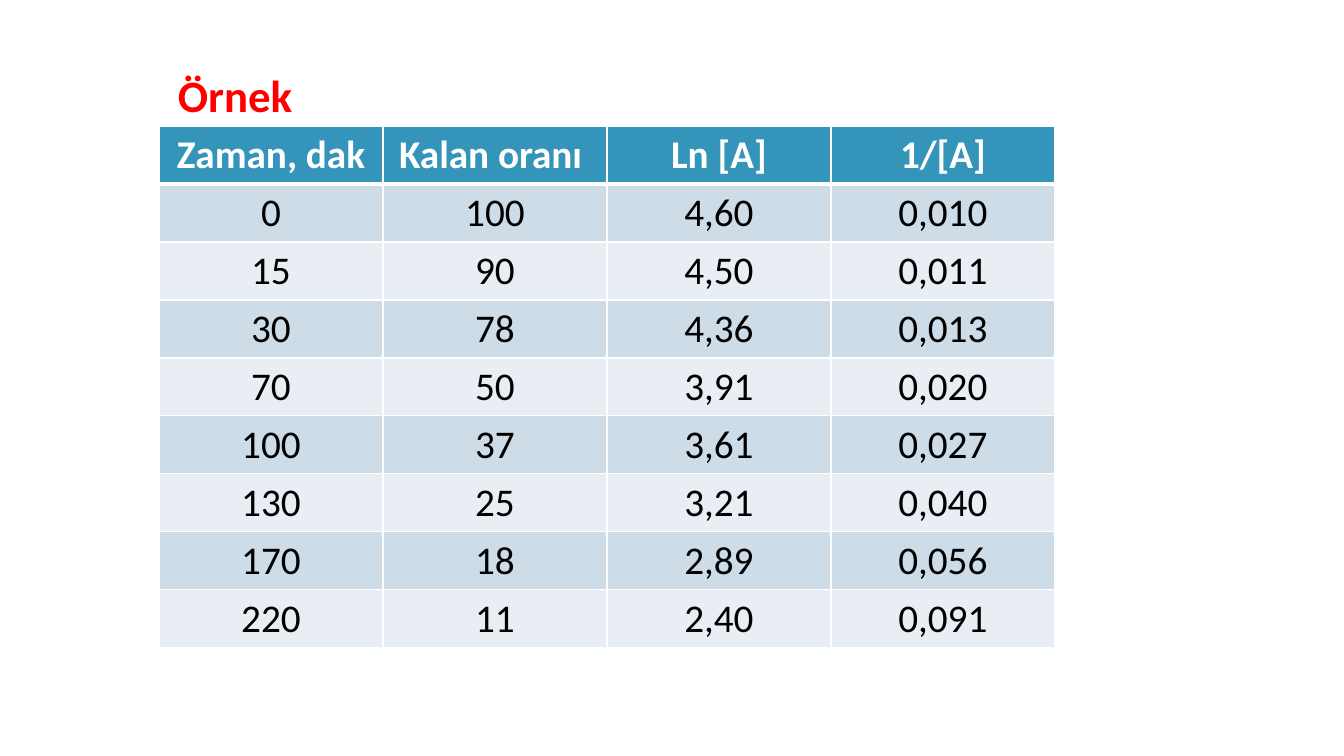
from typing import NamedTuple

from lxml.etree import SubElement
from pptx import Presentation
from pptx.dml.color import RGBColor
from pptx.enum.text import MSO_ANCHOR, PP_ALIGN
from pptx.oxml.ns import qn
from pptx.slide import Slide
from pptx.table import _Cell
from pptx.text.text import Font
from pptx.util import Emu, Pt

SLIDE_WIDTH, SLIDE_HEIGHT = 1344, 756
EMU_PER_PX = 12192000 / SLIDE_WIDTH

FONT_NAME = "Calibri"
RED = RGBColor(0xFF, 0x00, 0x00)
WHITE = RGBColor(0xFF, 0xFF, 0xFF)
BLACK = RGBColor(0x00, 0x00, 0x00)
TEAL = RGBColor(0x34, 0x94, 0xBA)
BAND_DARK = RGBColor(0xCE, 0xDC, 0xE7)
BAND_LIGHT = RGBColor(0xE8, 0xEE, 0xF3)

COLUMN_WIDTH, ROW_HEIGHT = 224, 58
THIN, THICK = Pt(1), Pt(3)


class Measurement(NamedTuple):
    time: str
    remaining: str
    log: str
    inverse: str


HEADINGS = Measurement("Zaman, dak", "Kalan oranı ", "Ln [A]", "1/[A]")
MEASUREMENTS = [
    Measurement("0", "100", "4,60", "0,010"),
    Measurement("15", "90", "4,50", "0,011"),
    Measurement("30", "78", "4,36", "0,013"),
    Measurement("70", "50", "3,91", "0,020"),
    Measurement("100", "37", "3,61", "0,027"),
    Measurement("130", "25", "3,21", "0,040"),
    Measurement("170", "18", "2,89", "0,056"),
    Measurement("220", "11", "2,40", "0,091"),
]


class RowStyle(NamedTuple):
    fill: RGBColor
    ink: RGBColor
    bold: bool
    top: int
    bottom: int


def px(length: int) -> Emu:
    return Emu(round(length * EMU_PER_PX))


def row_style(row: int) -> RowStyle:
    if row == 0:
        return RowStyle(TEAL, WHITE, True, THIN, THICK)
    band = BAND_DARK if row % 2 else BAND_LIGHT
    return RowStyle(band, BLACK, False, THICK if row == 1 else THIN, THIN)


def style_font(font: Font, size: int, ink: RGBColor, bold: bool) -> None:
    font.name = FONT_NAME
    font.size = Pt(size)
    font.color.rgb = ink
    font.bold = bold


def add_borders(cell: _Cell, style: RowStyle) -> None:
    """Add white cell borders; call before the fill, which must follow them in the XML."""
    properties = cell._tc.get_or_add_tcPr()
    sides = {"L": THIN, "R": THIN, "T": style.top, "B": style.bottom}
    for side, width in sides.items():
        line = SubElement(properties, qn(f"a:ln{side}"), w=str(int(width)))
        solid = SubElement(line, qn("a:solidFill"))
        SubElement(solid, qn("a:srgbClr"), val=str(WHITE))


def fill_cell(cell: _Cell, text: str, style: RowStyle) -> None:
    add_borders(cell, style)
    cell.fill.solid()
    cell.fill.fore_color.rgb = style.fill
    cell.vertical_anchor = MSO_ANCHOR.MIDDLE
    cell.text_frame.text = text
    paragraph = cell.text_frame.paragraphs[0]
    paragraph.alignment = PP_ALIGN.CENTER
    style_font(paragraph.runs[0].font, 28, style.ink, style.bold)


def add_heading(slide: Slide) -> None:
    heading = slide.shapes.add_textbox(px(168), px(17), px(878), px(109)).text_frame
    heading.word_wrap = True
    heading.vertical_anchor = MSO_ANCHOR.BOTTOM
    heading.text = "Örnek"
    paragraph = heading.paragraphs[0]
    paragraph.line_spacing = 1.5
    style_font(paragraph.runs[0].font, 32, RED, True)


def add_measurements(slide: Slide) -> None:
    rows = [HEADINGS, *MEASUREMENTS]
    table = slide.shapes.add_table(
        len(rows), len(HEADINGS), px(159), px(126),
        px(COLUMN_WIDTH * len(HEADINGS)), px(ROW_HEIGHT * len(rows)),
    ).table
    for column in table.columns:
        column.width = px(COLUMN_WIDTH)
    for r, measurement in enumerate(rows):
        table.rows[r].height = px(ROW_HEIGHT)
        for c, text in enumerate(measurement):
            fill_cell(table.cell(r, c), text, row_style(r))


def main() -> None:
    presentation = Presentation()
    presentation.slide_width = px(SLIDE_WIDTH)
    presentation.slide_height = px(SLIDE_HEIGHT)
    slide = presentation.slides.add_slide(presentation.slide_layouts[6])
    add_heading(slide)
    add_measurements(slide)
    presentation.save("out.pptx")


if __name__ == "__main__":
    main()
